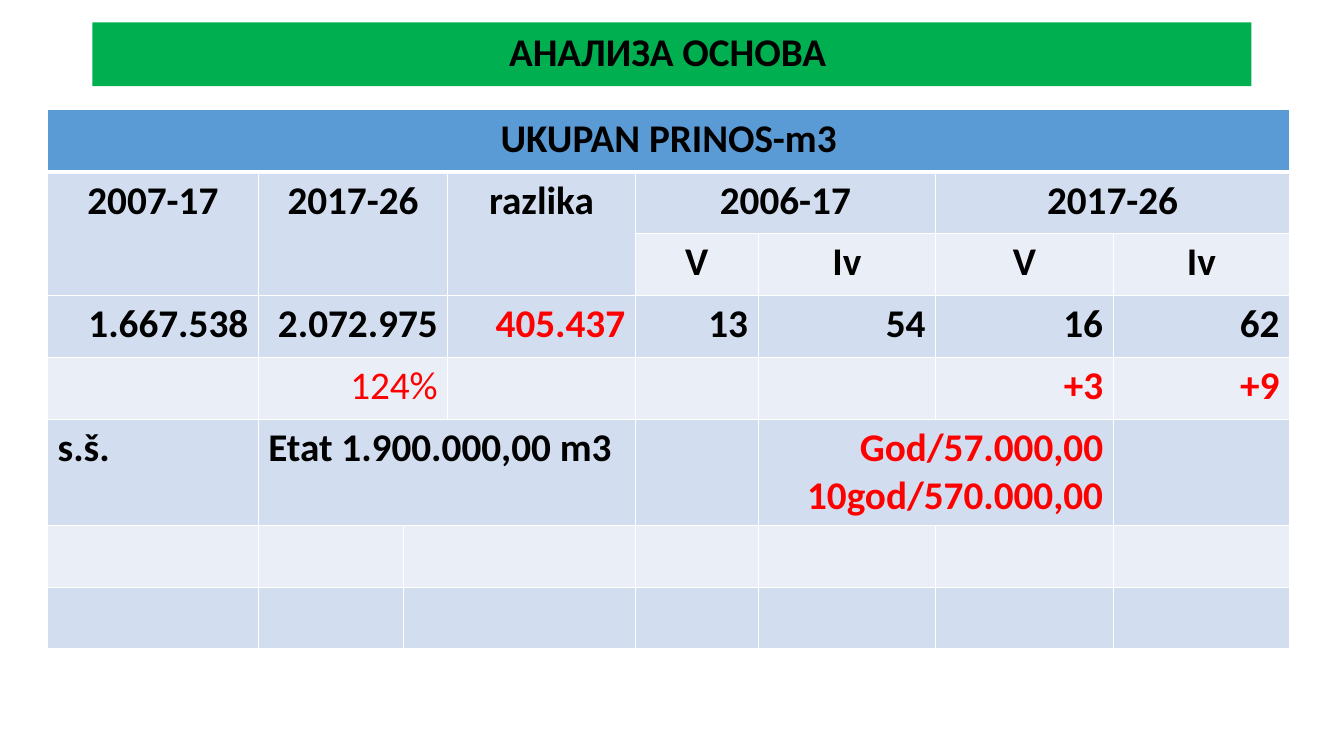
from dataclasses import dataclass

from lxml import etree
from pptx import Presentation, util as u
from pptx.dml.color import RGBColor
from pptx.enum import shapes, text
from pptx.oxml import ns


@dataclass(frozen=True)
class Theme:
    font: str = "Calibri"
    size: float = 28
    ink: str = "000000"
    accent: str = "FF0000"
    banner: str = "00B050"
    header: str = "5B9BD5"
    bands: tuple = ("EAEFF7", "D2DEEF")
    rule: str = "FFFFFF"
    thin: float = 1
    thick: float = 3


THEME = Theme()
LEFT, CENTER, RIGHT = (text.PP_ALIGN.LEFT, text.PP_ALIGN.CENTER,
                       text.PP_ALIGN.RIGHT)

COLUMNS = [150.5, 103.7, 31.7, 133.9, 87.8, 126.8, 126.8, 126]
ROWS = [44.2] * 5 + [75.8] + [44.2] * 2

# First row, first column, last row, last column
MERGES = [(0, 0, 0, 7), (1, 0, 2, 0), (1, 1, 2, 2), (1, 3, 2, 3),
          (1, 4, 1, 5), (1, 6, 1, 7), (3, 1, 3, 2), (4, 1, 4, 2),
          (5, 1, 5, 3), (5, 5, 5, 6), (6, 2, 6, 3), (7, 2, 7, 3)]

# Row, alignment, text by column
CONTENT = [
    (0, CENTER, {0: "UKUPAN PRINOS-m3"}),
    (1, CENTER, {0: "2007-17", 1: "2017-26", 3: "razlika",
                 4: "2006-17", 6: "2017-26"}),
    (2, CENTER, {4: "V", 5: "Iv", 6: "V", 7: "Iv"}),
    (3, RIGHT, {0: "1.667.538", 1: "2.072.975", 3: "405.437",
                4: "13", 5: "54", 6: "16", 7: "62"}),
    (4, RIGHT, {1: "124%", 6: "+3", 7: "+9"}),
    (5, LEFT, {0: "s.š.", 1: "Etat 1.900.000,00 m3"}),
    (5, RIGHT, {5: "God/57.000,00\n10god/570.000,00"}),
]
RED_CELLS = {(3, 3), (4, 1), (4, 6), (4, 7), (5, 5)}
REGULAR_CELLS = {(4, 1)}


def write(tf, words, align, color=THEME.ink, bold=True):
    for i, line in enumerate(words.split("\n")):
        p = tf.paragraphs[0] if i == 0 else tf.add_paragraph()
        p.alignment = align
        r = p.add_run()
        r.text = line
        r.font.name = THEME.font
        r.font.size = u.Pt(THEME.size)
        r.font.bold = bold
        r.font.color.rgb = RGBColor.from_string(color)


def paint(fill, color):
    fill.solid()
    fill.fore_color.rgb = RGBColor.from_string(color)


def add_borders(cell, row):
    tc_pr = cell._tc.get_or_add_tcPr()
    for side in ("L", "R", "T", "B"):
        under_header = (row, side) in {(0, "B"), (1, "T")}
        width = THEME.thick if under_header else THEME.thin
        ln = etree.SubElement(tc_pr, ns.qn(f"a:ln{side}"), w=str(u.Pt(width)))
        solid = etree.SubElement(ln, ns.qn("a:solidFill"))
        etree.SubElement(solid, ns.qn("a:srgbClr"), val=THEME.rule)


def add_banner(s, x, y, w, h):
    sp = s.shapes.add_shape(shapes.MSO_SHAPE.RECTANGLE,
                            u.Pt(x), u.Pt(y), u.Pt(w), u.Pt(h))
    sp.shadow.inherit = False
    paint(sp.fill, THEME.banner)
    sp.line.fill.background()
    tf = sp.text_frame
    tf.word_wrap = True
    tf.vertical_anchor = text.MSO_ANCHOR.MIDDLE
    write(tf, "АНАЛИЗА ОСНОВА ", CENTER)
    tf.paragraphs[0].line_spacing = 0.9


def add_yield_table(s, x, y):
    table = s.shapes.add_table(len(ROWS), len(COLUMNS), u.Pt(x), u.Pt(y),
                               u.Pt(sum(COLUMNS)), u.Pt(sum(ROWS))).table
    for column, width in zip(table.columns, COLUMNS):
        column.width = u.Pt(width)
    for row, height in zip(table.rows, ROWS):
        row.height = u.Pt(height)

    # Borders and alternating bands
    for i in range(len(ROWS)):
        for j in range(len(COLUMNS)):
            cell = table.cell(i, j)
            add_borders(cell, i)
            paint(cell.fill, THEME.bands[i % 2] if i else THEME.header)

    # Merged cells
    for top, left, bottom, right in MERGES:
        table.cell(top, left).merge(table.cell(bottom, right))

    # Wording
    for i, align, entries in CONTENT:
        for j, words in entries.items():
            color = THEME.accent if (i, j) in RED_CELLS else THEME.ink
            write(table.cell(i, j).text_frame, words, align, color,
                  (i, j) not in REGULAR_CELLS)


def main():
    prs = Presentation()
    prs.slide_width, prs.slide_height = u.Pt(960), u.Pt(540)
    s = prs.slides.add_slide(prs.slide_layouts[6])
    add_banner(s, 66, 16, 828, 45.5)
    add_yield_table(s, 34, 78.5)
    prs.save("out.pptx")


if __name__ == "__main__":
    main()
